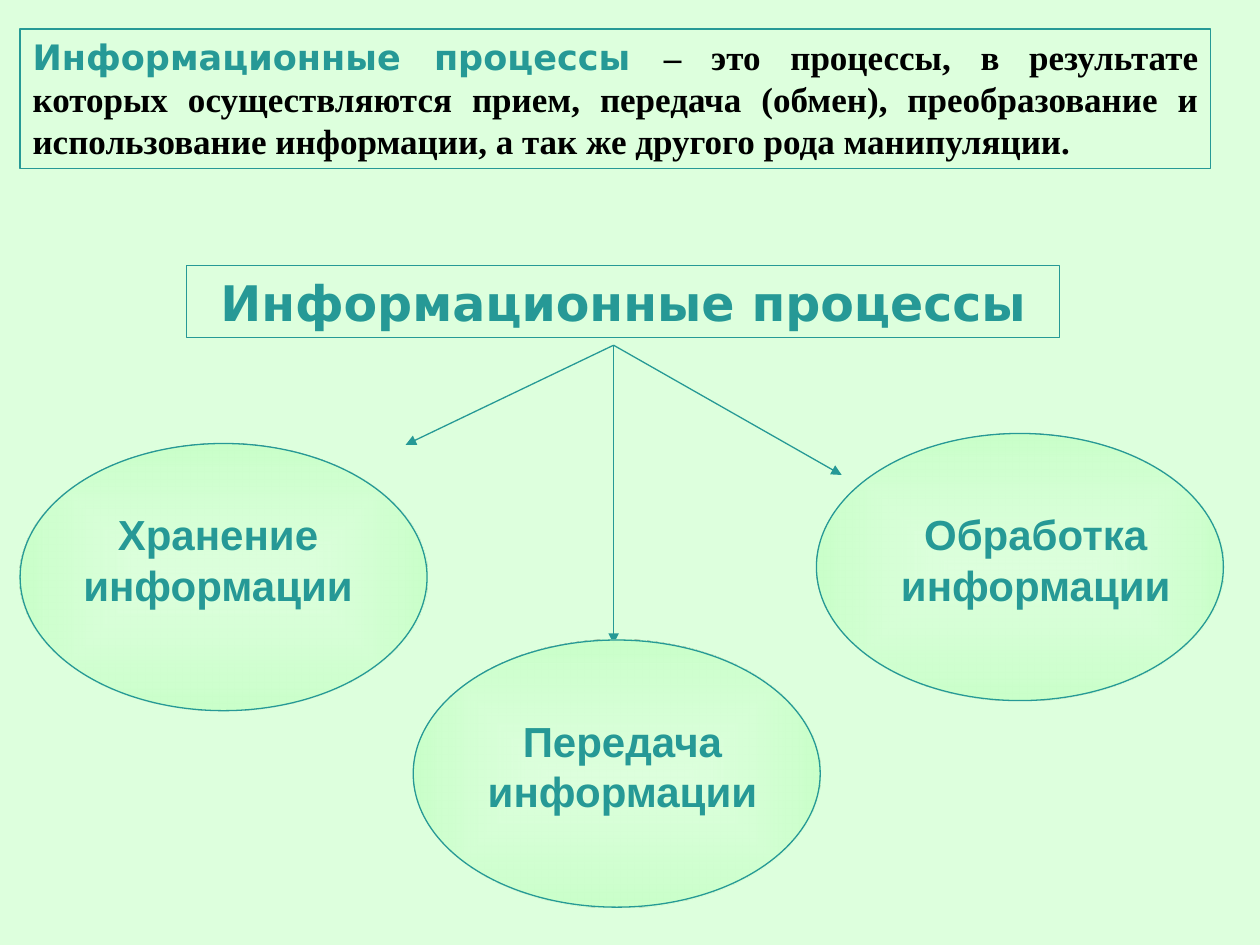
"""Build a slide on information processes and their three kinds."""
from dataclasses import dataclass

from lxml import etree
from pptx import Presentation
from pptx.dml.color import RGBColor
from pptx.enum.shapes import MSO_CONNECTOR, MSO_SHAPE
from pptx.enum.text import MSO_ANCHOR, MSO_AUTO_SIZE, PP_ALIGN
from pptx.oxml import parse_xml
from pptx.oxml.ns import qn
from pptx.util import Inches, Pt

RECT, OVAL = MSO_SHAPE.RECTANGLE, MSO_SHAPE.OVAL
LINE = MSO_CONNECTOR.STRAIGHT
TOP, GROW = MSO_ANCHOR.TOP, MSO_AUTO_SIZE.SHAPE_TO_FIT_TEXT
CENTER, JUSTIFY = PP_ALIGN.CENTER, PP_ALIGN.JUSTIFY
UNIT = Inches(0.1)


@dataclass(frozen=True)
class Theme:
    back: str = "DDFFDD"
    rim: str = "C9FFC9"
    teal: str = "269996"
    ink: str = "000000"
    head: str = "DejaVu Sans"
    body: str = "Times New Roman"
    label: str = "Arial"
    large: int = 28
    mid: int = 24
    small: int = 20
    line: float = 0.75


theme = Theme()
GLOW = f"""<a:gradFill xmlns:a="http://schemas.openxmlformats.org/drawingml/2006/main" rotWithShape="1">
<a:gsLst>
<a:gs pos="0"><a:srgbClr val="{theme.back}"><a:alpha val="59000"/></a:srgbClr></a:gs>
<a:gs pos="100000"><a:srgbClr val="{theme.rim}"/></a:gs>
</a:gsLst>
<a:path path="shape"><a:fillToRect l="50000" t="50000" r="50000" b="50000"/></a:path>
</a:gradFill>"""


def outline(home, kind, *place):
    shape = home.add_shape(kind, *(int(n * UNIT) for n in place))
    shape.shadow.inherit = False
    shape.fill.background()
    shape.line.color.rgb = RGBColor.from_string(theme.teal)
    shape.line.width = Pt(theme.line)
    return shape


def write(shape, align, size, *parts):
    frame = shape.text_frame
    frame.word_wrap = True
    frame.auto_size = GROW
    frame.vertical_anchor = TOP
    para = frame.paragraphs[0]
    para.alignment = align
    para.font.size = Pt(size)
    para.font.bold = True
    for text, face, color in parts:
        run = para.add_run()
        run.text = text
        run.font.name = face
        run.font.color.rgb = RGBColor.from_string(color)


deck = Presentation()
deck.slide_width, deck.slide_height = 100 * UNIT, 75 * UNIT
slide = deck.slides.add_slide(deck.slide_layouts[6])
slide.background.fill.solid()
slide.background.fill.fore_color.rgb = RGBColor.from_string(theme.back)
shapes = slide.shapes

title = outline(shapes, RECT, 14.8, 21.1, 69.3, 5.7)
write(title, CENTER, theme.large, ("Информационные процессы", theme.head, theme.teal))

start = (48.7, 27.4)
for end in ((48.7, 51.1), (32.2, 35.3), (66.8, 37.7)):
    arrow = shapes.add_connector(LINE, *(int(n * UNIT) for n in start + end))
    arrow.line.color.rgb = RGBColor.from_string(theme.teal)
    arrow.line.width = Pt(theme.line)
    etree.SubElement(arrow.line._get_or_add_ln(), qn("a:tailEnd"), type="triangle")
    etree.SubElement(arrow._element.spPr, qn("a:effectLst"))

kinds = (
    ("Передача информации", 32.8, 50.8, 36.8, 56.3),
    ("Хранение информации", 1.6, 35.2, 4.7, 39.9),
    ("Обработка информации", 64.8, 34.4, 69.6, 39.9),
)
for text, left, top, inner, row in kinds:
    group = shapes.add_group_shape().shapes
    oval = outline(group, OVAL, left, top, 32.3, 21.2)
    props = oval._element.spPr
    props.replace(props.find(qn("a:noFill")), parse_xml(GLOW))
    label = group.add_textbox(*(int(n * UNIT) for n in (inner, row, 25.2, 9)))
    write(label, CENTER, theme.mid, (text, theme.label, theme.teal))

meaning = outline(shapes, RECT, 1.6, 2.3, 94.5, 11.1)
write(
    meaning, JUSTIFY, theme.small,
    ("Информационные процессы ", theme.head, theme.teal),
    ("– это процессы, в результате которых осуществляются прием, передача (обмен), "
     "преобразование и использование информации, а так же другого рода манипуляции.",
     theme.body, theme.ink),
)

deck.save("out.pptx")
